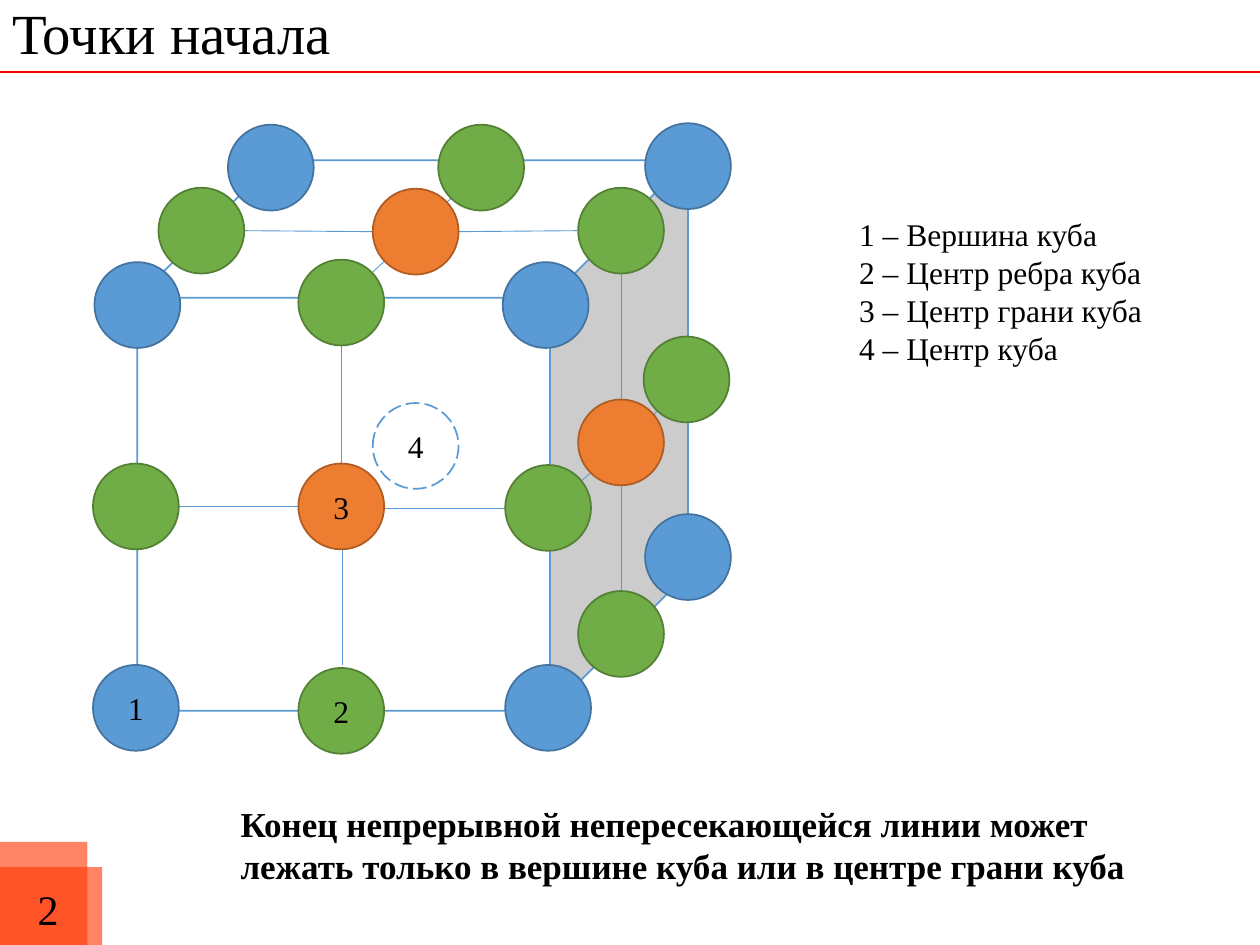
"""Build the slide that shows the starting points on a cube."""
from dataclasses import dataclass

from lxml import etree
from pptx import Presentation
from pptx import util as u
from pptx.dml.color import RGBColor
from pptx.enum import dml, shapes, text
from pptx.oxml.ns import qn


@dataclass(frozen=True)
class Theme:
    """Colours and type sizes of the slide."""
    font: str = "Times New Roman"
    ink: str = "000000"
    white: str = "FFFFFF"
    rule: str = "FF0000"
    badge: str = "FF3300"
    blue: str = "5B9BD5"
    vertex: tuple = ("5B9BD5", "43739E")
    edge: tuple = ("70AD47", "538035")
    face: tuple = ("ED7D31", "AF5C24")
    title: float = 32.4
    page: float = 24
    note: float = 20
    body: float = 18


THEME = Theme()
DIAM = 1.73
VERTICES = [(2.74, 14.27, "1"), (11.05, 14.27), (2.77, 6.15), (11, 6.15),
            (13.87, 11.23), (13.87, 3.35), (5.46, 3.38)]
EDGES = [(6.88, 14.33, "2"), (2.74, 10.21), (12.52, 12.78), (12.52, 4.65),
         (4.06, 4.65), (11.05, 10.24), (13.84, 7.65), (6.88, 6.1), (9.7, 3.38)]
FACES = [(6.88, 10.21, "3"), (12.52, 8.92), (8.38, 4.67)]
LINKS = [(3.61, 10.21, 6.02, 10.21), (7.77, 10.24, 10.19, 10.24),
         (6.88, 9.35, 6.88, 6.96), (6.91, 13.41, 6.91, 11.02),
         (12.52, 11.91, 12.52, 9.78), (12.52, 8.05, 12.52, 5.51),
         (11.63, 4.65, 9.25, 4.67), (7.52, 4.67, 4.93, 4.65),
         (11.2, 10.13, 11.91, 9.53), (12.19, 9.35, 13.39, 8.15),
         (6.81, 6.15, 9.78, 3.35)]
LEGEND = ["1 – Вершина куба", "2 – Центр ребра куба",
          "3 – Центр грани куба", "4 – Центр куба"]
NOTE = ("Конец непрерывной непересекающейся линии может "
        "лежать только в вершине куба или в центре грани куба")


def rgb(code):
    """Turn a hex code into a colour."""
    return RGBColor.from_string(code)


def cms(*nums):
    """Turn numbers into lengths."""
    return [u.Cm(num) for num in nums]


def add_run(para, words, size, bold=False):
    """Add one run of text to a paragraph."""
    run = para.add_run()
    run.text = words
    font = run.font
    font.name, font.size, font.bold = THEME.font, u.Pt(size), bold
    font.color.rgb = rgb(THEME.ink)


def add_title(slide, words):
    """Place and fill the title."""
    title = slide.shapes.title
    title.left, title.top, title.width, title.height = cms(0, 0, 22.94, 1.45)
    frame = title.text_frame
    frame.auto_size = text.MSO_AUTO_SIZE.NONE
    frame.vertical_anchor = text.MSO_ANCHOR.MIDDLE
    para = frame.paragraphs[0]
    para.alignment, para.line_spacing = text.PP_ALIGN.LEFT, 0.9
    add_run(para, words, THEME.title)


def add_text(slide, box, lines, size, bold=False):
    """Add a wrapped text box with one paragraph per line."""
    frame = slide.shapes.add_textbox(*cms(*box)).text_frame
    frame.word_wrap = True
    for num, words in enumerate(lines):
        para = frame.add_paragraph() if num else frame.paragraphs[0]
        add_run(para, words, size, bold)


def add_line(slide, ends, color, width):
    """Add a straight line without a shadow."""
    line = slide.shapes.add_connector(shapes.MSO_CONNECTOR.STRAIGHT, *cms(*ends))
    line.line.color.rgb = rgb(color)
    line.line.width = u.Pt(width)
    etree.SubElement(line._element.spPr, qn("a:effectLst"))


def add_shape(slide, kind, box, fill, edge=None):
    """Add a flat preset shape, outlined if an edge colour is given."""
    shape = slide.shapes.add_shape(kind, *cms(*box))
    shape.shadow.inherit = False
    shape.fill.solid()
    shape.fill.fore_color.rgb = rgb(fill)
    if edge:
        shape.line.color.rgb = rgb(edge)
        shape.line.width = u.Pt(1)
    else:
        shape.line.fill.background()
    return shape


def add_node(slide, colors, x, y, label=""):
    """Add a round node about its centre."""
    box = (x - DIAM / 2, y - DIAM / 2, DIAM, DIAM)
    node = add_shape(slide, shapes.MSO_SHAPE.OVAL, box, *colors)
    if label:
        frame = node.text_frame
        frame.vertical_anchor = text.MSO_ANCHOR.MIDDLE
        para = frame.paragraphs[0]
        para.alignment = text.PP_ALIGN.CENTER
        add_run(para, label, THEME.body)
    return node


def add_cube(slide):
    """Draw the cube with its links and nodes."""
    add_shape(slide, shapes.MSO_SHAPE.CUBE, (2.77, 3.23, 11.1, 11.1),
              THEME.white, THEME.blue)
    for ends in LINKS:
        add_line(slide, ends, THEME.blue, 0.5)
    groups = ((THEME.vertex, VERTICES), (THEME.edge, EDGES), (THEME.face, FACES))
    for colors, nodes in groups:
        for node in nodes:
            add_node(slide, colors, *node)
    core = add_node(slide, (THEME.white, THEME.blue), 8.38, 8.99, "4")
    core.line.dash_style = dml.MSO_LINE.LONG_DASH


def add_badge(slide, page):
    """Add the page number on two see-through blocks."""
    for left, top in ((-2.51, 16.97), (-2.21, 17.48)):
        block = add_shape(slide, shapes.MSO_SHAPE.RECTANGLE,
                          (left, top, 4.27, 3.18), THEME.badge)
        tint = block._element.spPr.find(qn("a:solidFill"))[0]
        etree.SubElement(tint, qn("a:alpha"), val="60000")
    add_text(slide, (0.51, 17.68, 1.75, 1.27), [page], THEME.page)


def main():
    """Build and save the slide."""
    deck = Presentation()
    deck.slide_width, deck.slide_height = cms(25.4, 19.05)
    slide = deck.slides.add_slide(deck.slide_layouts[5])
    add_title(slide, "Точки начала")
    add_line(slide, (0, 1.45, 25.4, 1.45), THEME.rule, 1.5)
    add_cube(slide)
    add_text(slide, (17.07, 4.22, 6.73, 4.11), LEGEND, THEME.body)
    add_text(slide, (4.6, 16.05, 18.34, 2.74), [NOTE], THEME.note, True)
    add_badge(slide, "2")
    deck.save("out.pptx")


if __name__ == "__main__":
    main()
